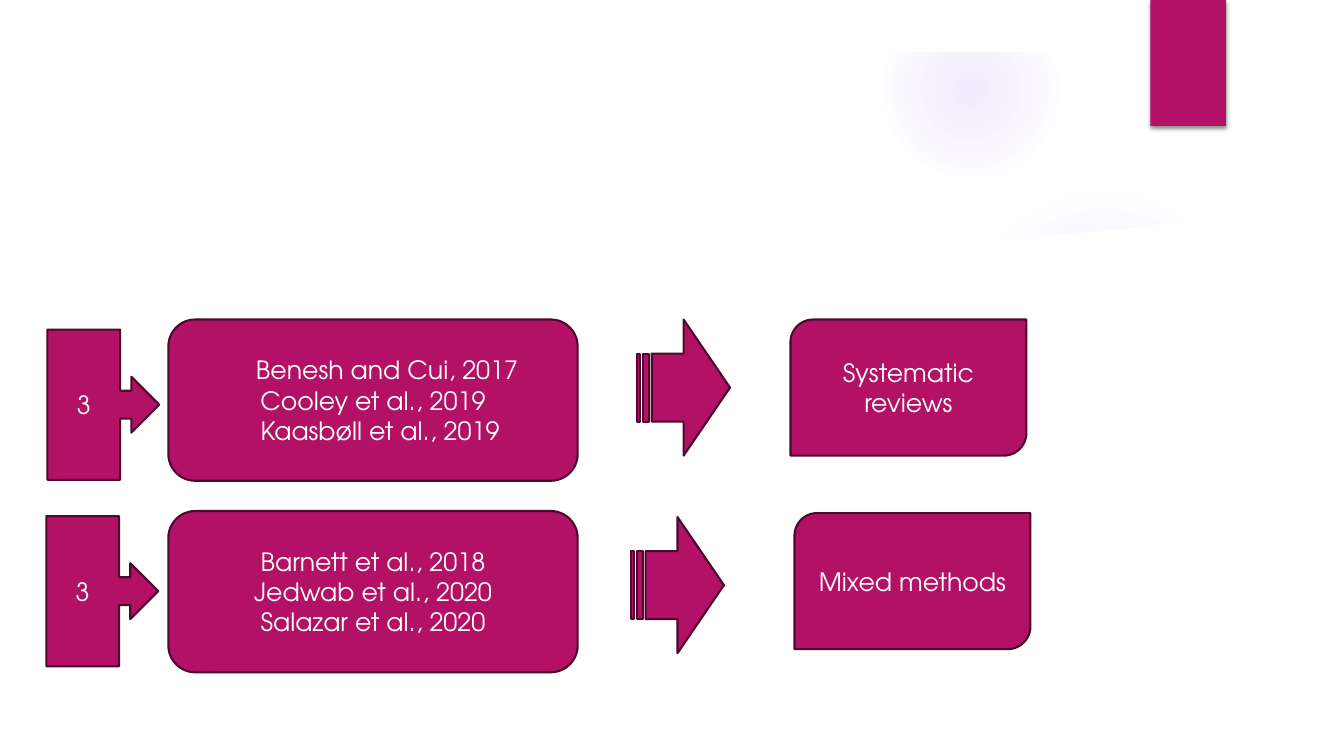
from lxml import etree
from pptx import Presentation
from pptx.dml.color import RGBColor
from pptx.enum.shapes import MSO_SHAPE as SHAPE
from pptx.enum.text import MSO_ANCHOR as ANCHOR, PP_ALIGN as ALIGN
from pptx.oxml import parse_xml
from pptx.oxml.ns import nsdecls, qn
from pptx.util import Inches, Pt

FONT = "TeX Gyre Adventor"
PINK, PLUM, WHITE, VIOLET = "B31166", "4E072D", "FFFFFF", "9B6BF2"
WIDTH, HEIGHT = 13.33, 7.5
MARGIN = 0.52

# Upper edge of the white panel, left to right
PANEL_EDGE = [(0.5, 2.04), (1.35, 2.15), (2.49, 2.27), (4.01, 2.38),
              (5.59, 2.46), (7.08, 2.48), (8.67, 2.45), (9.49, 2.41),
              (10.32, 2.35), (11.16, 2.27), (12, 2.17), (12.84, 2.04)]

# Per row: count, studies with left indent, kind of study, then the
# positions of callout, studies box, striped arrow and kind box
ROWS = [
    ("3", [("Benesh and Cui, 2017", 0.28), ("Cooley et al., 2019", 0),
           ("Kaasbøll et al., 2019", 0.14)], "Systematic reviews",
     (0.47, 3.27), (1.67, 3.17), (6.32, 3.17), (7.84, 3.17)),
    ("3", [("Barnett et al., 2018", 0), ("Jedwab et al., 2020", 0),
           ("Salazar et al., 2020", 0)], "Mixed methods",
     (0.46, 5.12), (1.67, 5.07), (6.26, 5.13), (7.88, 5.09)),
]


def rgb(color):
    return RGBColor.from_string(color)


def paint(sp, fill, line=None):
    sp.shadow.inherit = False
    sp.fill.solid()
    sp.fill.fore_color.rgb = rgb(fill)
    if line:
        sp.line.color.rgb = rgb(line)
        sp.line.width = Pt(1.5)
    else:
        sp.line.fill.background()


def add_box(s, kind, pos, size, fill=PINK, line=PLUM):
    sp = s.shapes.add_shape(kind, *map(Inches, pos + size))
    paint(sp, fill, line)
    return sp


def add_text(sp, lines, size=18, color=WHITE, align=ALIGN.CENTER):
    """Write (text, left indent) lines into a shape."""
    tf = sp.text_frame
    tf.word_wrap = True
    tf.vertical_anchor = ANCHOR.MIDDLE
    for i, (text, indent) in enumerate(lines):
        p = tf.add_paragraph() if i else tf.paragraphs[0]
        p.alignment = align
        if indent:
            p._p.get_or_add_pPr().set("marL", str(Inches(indent)))
        r = p.add_run()
        r.text = text
        r.font.name = FONT
        r.font.size = Pt(size)
        r.font.color.rgb = rgb(color)


def add_glow(s, pos, diameter, stops):
    """Draw a circle that fades out; stops are (position, opacity) in %."""
    sp = add_box(s, SHAPE.OVAL, pos, (diameter, diameter), VIOLET, None)
    marks = "".join(
        f'<a:gs pos="{at * 1000}"><a:srgbClr val="{VIOLET}">'
        f'<a:alpha val="{alpha * 1000}"/></a:srgbClr></a:gs>'
        for at, alpha in stops)
    grad = parse_xml(
        f'<a:gradFill {nsdecls("a")} rotWithShape="1"><a:gsLst>{marks}</a:gsLst>'
        '<a:path path="circle"><a:fillToRect l="50000" t="50000" r="50000" '
        'b="50000"/></a:path></a:gradFill>')
    spPr = sp._element.spPr
    spPr.replace(spPr.find(qn("a:solidFill")), grad)


def add_panel(s):
    points = [(Inches(x), Inches(y)) for x, y in PANEL_EDGE]
    right, left = points[-1][0], points[0][0]
    builder = s.shapes.build_freeform(*points[0])
    builder.add_line_segments(
        points[1:] + [(right, Inches(7)), (left, Inches(7))], close=True)
    paint(builder.convert_to_shape(), WHITE)


def add_shadow(sp, blur, distance, alpha):
    effects = sp._element.spPr.find(qn("a:effectLst"))
    shadow = etree.SubElement(effects, qn("a:outerShdw"), blurRad=str(Pt(blur)),
                              dist=str(Pt(distance)), dir="5400000",
                              rotWithShape="0")
    color = etree.SubElement(shadow, qn("a:srgbClr"), val="000000")
    etree.SubElement(color, qn("a:alpha"), val=str(alpha * 1000))


def add_background(s):
    add_glow(s, (9.41, 1.83), 3.08, [(0, 7), (36, 6), (69, 0), (100, 0)])
    add_glow(s, (8.75, 0.01), 1.75, [(0, 14), (36, 7), (73, 0), (100, 0)])
    add_panel(s)
    frame = add_box(s, SHAPE.FRAME, (0, 0), (WIDTH, HEIGHT), WHITE, None)
    frame.adjustments[0] = MARGIN / HEIGHT
    tab = add_box(s, SHAPE.RECTANGLE, (11.41, 0), (0.75, 1.25), line=None)
    add_shadow(tab, 3, 2, 45)


def add_row(s, count, studies, kind, count_at, studies_at, arrow_at, kind_at):
    add_box(s, SHAPE.STRIPED_RIGHT_ARROW, arrow_at, (0.92, 1.35))
    sp = add_box(s, SHAPE.ROUNDED_RECTANGLE, studies_at, (4.06, 1.6))
    add_text(sp, studies)
    sp = add_box(s, SHAPE.ROUND_2_DIAG_RECTANGLE, kind_at, (2.34, 1.35))
    add_text(sp, [(kind, 0)])
    sp = add_box(s, SHAPE.RIGHT_ARROW_CALLOUT, count_at, (1.11, 1.49))
    add_text(sp, [(count, 0)])


def main():
    prs = Presentation()
    prs.slide_width, prs.slide_height = Inches(WIDTH), Inches(HEIGHT)
    s = prs.slides.add_slide(prs.slide_layouts[6])
    add_background(s)
    for row in ROWS:
        add_row(s, *row)
    prs.save("out.pptx")


if __name__ == "__main__":
    main()
